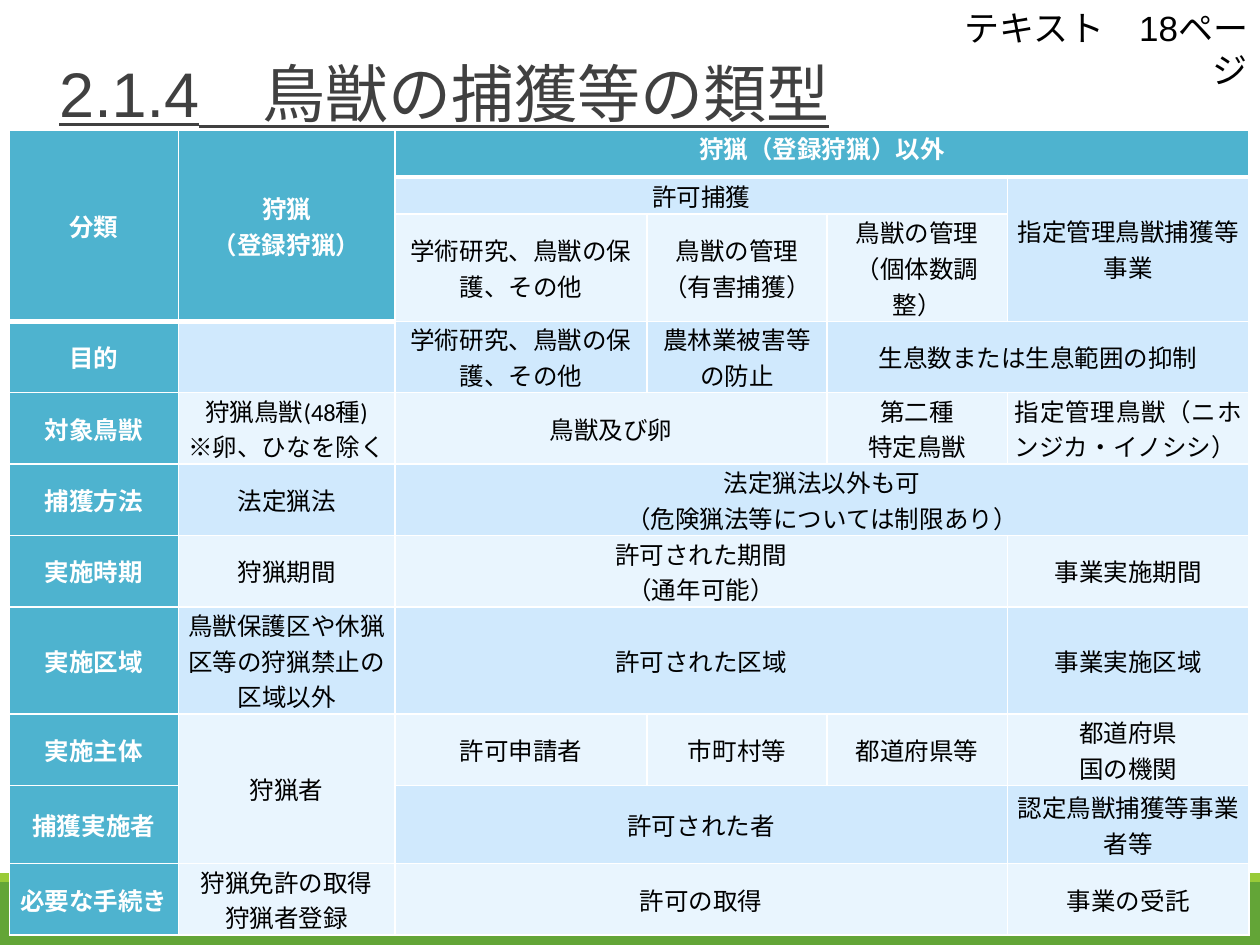
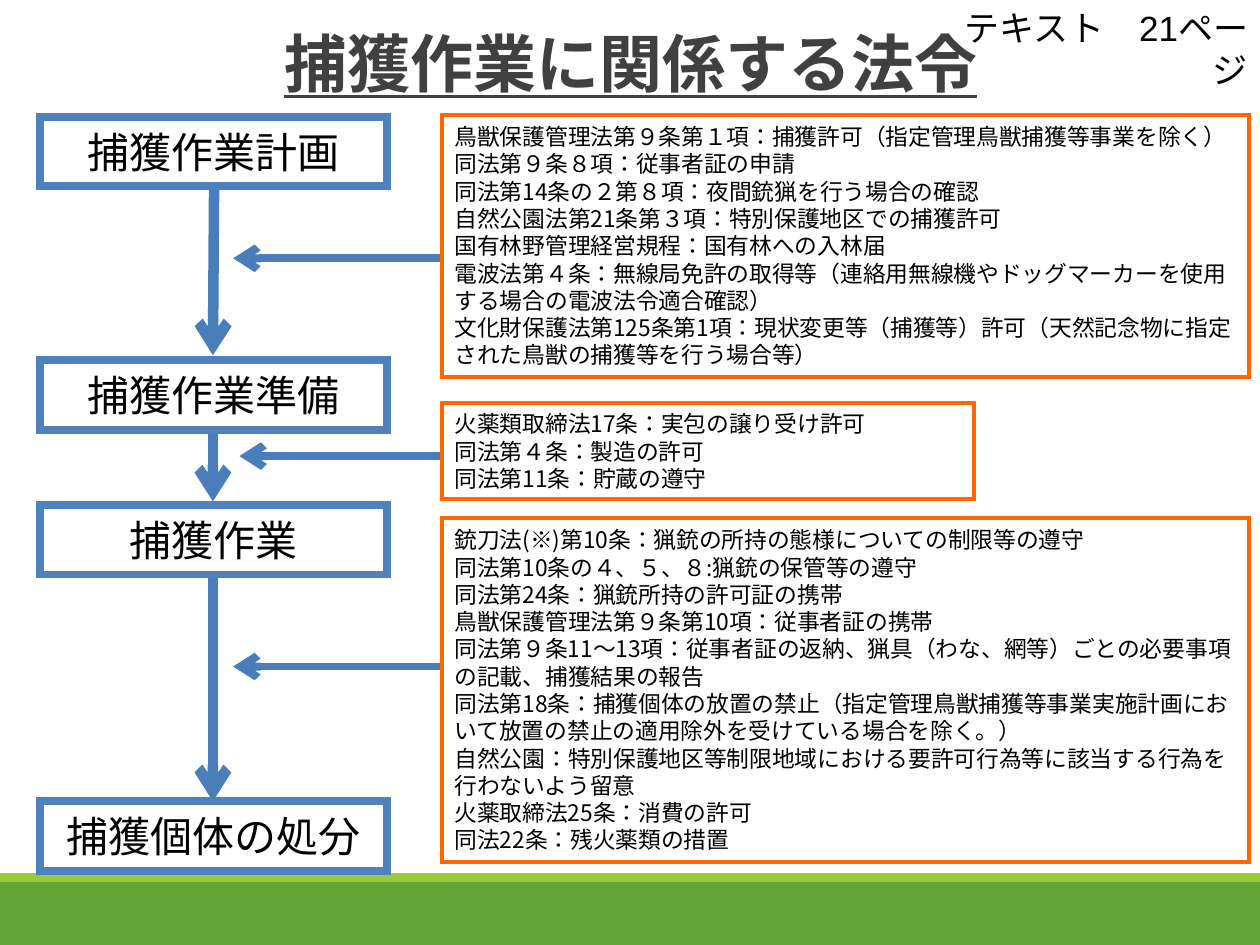
from dataclasses import dataclass

from lxml import etree
from pptx import Presentation
from pptx import util as u
from pptx.dml.color import RGBColor
from pptx.enum import lang, shapes, text
from pptx.oxml import ns


@dataclass(frozen=True)
class Theme:
    # Colours
    white: str = "FFFFFF"
    black: str = "000000"
    title: str = "404040"
    band: str = "63A537"
    band_edge: str = "99CB38"
    header: str = "4EB3CF"
    row_odd: str = "D0E9FD"
    row_even: str = "E9F5FE"
    step: str = "4F81BD"
    arrow: str = "4A7EBB"
    law: str = "FF6600"
    # Type
    latin: str = "Arial"
    table_font: str = "Calibri"
    japanese: str = "Noto Sans CJK JP"
    title_size: int = 36
    step_size: int = 24
    label_size: int = 20
    table_size: int = 14
    law_size: int = 13
    law_leading: float = 15.6


THEME = Theme()
COLUMNS, ROWS = 100, 75  # layout grid of the slide
ALIGN = text.PP_ALIGN
ANCHOR = text.MSO_ANCHOR


def write_text(frame, content, *, size, font=THEME.japanese, color=THEME.black,
               bold=False, underline=False, align=ALIGN.LEFT,
               anchor=ANCHOR.MIDDLE, spacing=None):
    """Write one paragraph for each line of content."""
    frame.word_wrap = True
    frame.vertical_anchor = anchor
    for index, line in enumerate(content.split("\n")):
        paragraph = frame.paragraphs[0] if index == 0 else frame.add_paragraph()
        paragraph.alignment = align
        if spacing:
            paragraph.line_spacing = spacing
        run = paragraph.add_run()
        run.text = line
        run.font.size = u.Pt(size)
        run.font.name = font
        run.font.bold = bold
        run.font.underline = underline
        run.font.language_id = lang.MSO_LANGUAGE_ID.JAPANESE
        run.font.color.rgb = RGBColor.from_string(color)
        east_asian = etree.Element(ns.qn("a:ea"), typeface=THEME.japanese)
        run.font._element.find(ns.qn("a:latin")).addnext(east_asian)


def add_border(cell, side, width):
    properties = cell._tc.get_or_add_tcPr()
    line = etree.SubElement(properties, ns.qn(f"a:ln{side}"), w=str(u.Pt(width)))
    fill = etree.SubElement(line, ns.qn("a:solidFill"))
    etree.SubElement(fill, ns.qn("a:srgbClr"), val=THEME.white)


def span_of(grid, row, column):
    """Count the cells that '^' (up) and '<' (left) join to this one."""
    height = width = 1
    while row + height < len(grid) and grid[row + height][column] == "^":
        height += 1
    while column + width < len(grid[row]) and grid[row][column + width] == "<":
        width += 1
    return height, width


class Deck:
    def __init__(self, theme):
        self.theme = theme
        self.presentation = Presentation()
        self.presentation.slide_width = u.Inches(10)
        self.presentation.slide_height = u.Inches(7.5)
        self.slide = None

    def x(self, columns):
        return round(self.presentation.slide_width * columns / COLUMNS)

    def y(self, rows):
        return round(self.presentation.slide_height * rows / ROWS)

    def area(self, left, top, width, height):
        return self.x(left), self.y(top), self.x(width), self.y(height)

    def new_slide(self, title, area, page, **title_format):
        """Start a slide with its title and bottom bands."""
        layout = self.presentation.slide_layouts.get_by_name("Title Only")
        self.slide = self.presentation.slides.add_slide(layout)
        self.box((0, 70, 100, 5), fill=self.theme.band)
        self.box((0, 69.3, 100, 0.7), fill=self.theme.band_edge)
        shape = self.slide.shapes.title
        shape.left, shape.top, shape.width, shape.height = self.area(*area)
        shape.text_frame.auto_size = text.MSO_AUTO_SIZE.NONE
        write_text(shape.text_frame, title, size=self.theme.title_size,
                   color=self.theme.title, underline=True, spacing=0.9,
                   **title_format)
        self.page_label(page)

    def page_label(self, page):
        shape = self.slide.shapes.add_textbox(*self.area(74.6, 0, 25.4, 4.4))
        write_text(shape.text_frame, f"テキスト　{page}ページ",
                   size=self.theme.label_size, font=self.theme.latin,
                   align=ALIGN.RIGHT, anchor=ANCHOR.TOP)

    def box(self, area, fill=THEME.white, line=None, width=1, content=None,
            **text_format):
        shape = self.slide.shapes.add_shape(
            shapes.MSO_SHAPE.RECTANGLE, *self.area(*area))
        shape.shadow.inherit = False
        shape.fill.solid()
        shape.fill.fore_color.rgb = RGBColor.from_string(fill)
        if line:
            shape.line.color.rgb = RGBColor.from_string(line)
            shape.line.width = u.Pt(width)
            etree.SubElement(shape.line._get_or_add_ln(), ns.qn("a:miter"),
                             lim="800000")
        else:
            shape.line.fill.background()
        if content:
            write_text(shape.text_frame, content, **text_format)

    def arrow(self, start, end, width):
        connector = self.slide.shapes.add_connector(
            shapes.MSO_CONNECTOR.STRAIGHT, self.x(start[0]), self.y(start[1]),
            self.x(end[0]), self.y(end[1]))
        connector.line.color.rgb = RGBColor.from_string(self.theme.arrow)
        connector.line.width = u.Pt(width)
        etree.SubElement(connector.line._get_or_add_ln(), ns.qn("a:tailEnd"),
                         type="arrow")
        etree.SubElement(connector._element.spPr, ns.qn("a:effectLst"))

    def table(self, left, top, widths, heights, grid, justified=()):
        frame = self.slide.shapes.add_table(
            len(heights), len(widths),
            *self.area(left, top, sum(widths), sum(heights)))
        table = frame.table
        table.first_row = table.horz_banding = False
        for column, width in zip(table.columns, widths):
            column.width = self.x(width)
        for row, height in zip(table.rows, heights):
            row.height = self.y(height)
        for row, line in enumerate(grid):
            for column, content in enumerate(line):
                self.cell(table, grid, row, column, content,
                          justify=(row, column) in justified)

    def cell(self, table, grid, row, column, content, justify):
        theme = self.theme
        cell = table.cell(row, column)
        header = row == 0 or column == 0
        for side in "LRTB":
            add_border(cell, side, 3 if row == 0 and side == "B" else 1)
        cell.fill.solid()
        cell.fill.fore_color.rgb = RGBColor.from_string(
            theme.header if header else
            theme.row_odd if row % 2 else theme.row_even)
        cell.margin_left = cell.margin_right = self.x(0.6)
        cell.margin_top = cell.margin_bottom = 0
        if content in ("", "^", "<"):
            return
        height, width = span_of(grid, row, column)
        if height * width > 1:
            cell.merge(table.cell(row + height - 1, column + width - 1))
        top = row == 0 and height == 1
        cell.vertical_anchor = ANCHOR.TOP if top else ANCHOR.MIDDLE
        write_text(cell.text_frame, content, size=theme.table_size,
                   font=theme.table_font, bold=header,
                   color=theme.white if header else theme.black,
                   align=ALIGN.JUSTIFY if justify else ALIGN.CENTER,
                   anchor=cell.vertical_anchor)


CAPTURE_TYPES = [
    ["分類", "狩猟\n（登録狩猟）", "狩猟（登録狩猟）以外", "<", "<", "<"],
    ["^", "^", "許可捕獲", "<", "<", "指定管理鳥獣捕獲等事業"],
    ["^", "^", "学術研究、鳥獣の保護、その他", "鳥獣の管理\n（有害捕獲）",
     "鳥獣の管理\n（個体数調整）", "^"],
    ["目的", "", "学術研究、鳥獣の保護、その他", "農林業被害等の防止",
     "生息数または生息範囲の抑制", "<"],
    ["対象鳥獣", "狩猟鳥獣(48種)\n※卵、ひなを除く", "鳥獣及び卵", "<",
     "第二種\n特定鳥獣", "指定管理鳥獣（ニホンジカ・イノシシ）"],
    ["捕獲方法", "法定猟法",
     "法定猟法以外も可\n（危険猟法等については制限あり）", "<", "<", "<"],
    ["実施時期", "狩猟期間", "許可された期間\n（通年可能）", "<", "<",
     "事業実施期間"],
    ["実施区域", "鳥獣保護区や休猟区等の狩猟禁止の区域以外",
     "許可された区域", "<", "<", "事業実施区域"],
    ["実施主体", "狩猟者", "許可申請者", "市町村等", "都道府県等",
     "都道府県\n国の機関"],
    ["捕獲実施者", "^", "許可された者", "<", "<", "認定鳥獣捕獲等事業者等"],
    ["必要な手続き", "狩猟免許の取得\n狩猟者登録", "許可の取得", "<", "<",
     "事業の受託"],
]

# Row heights for two and three lines of text
TWO_LINES, THREE_LINES = 5.67, 8.5

# Top row of each step
STEPS = {"捕獲作業計画": 9.3, "捕獲作業準備": 28.6,
         "捕獲作業": 40.1, "捕獲個体の処分": 63.6}

# Start and end of the arrows between steps
STEP_ARROWS = [((17, 13.6), (16.9, 28.2)), ((16.9, 32), (16.9, 39.8)),
               ((16.9, 42.5), (16.9, 63.6))]

# Row and tip column of the arrows from the laws
LAW_ARROWS = [(20.5, 18.5), (36.2, 19), (52.9, 18.5)]

# Top, width and height of each law box, with its text
LAWS = [
    (9.1, 64, 20.8, """鳥獣保護管理法第９条第１項：捕獲許可（指定管理鳥獣捕獲等事業を除く）
同法第９条８項：従事者証の申請
同法第14条の２第８項：夜間銃猟を行う場合の確認
自然公園法第21条第３項：特別保護地区での捕獲許可
国有林野管理経営規程：国有林への入林届
電波法第４条：無線局免許の取得等（連絡用無線機やドッグマーカーを使用する場合の電波法令適合確認）
文化財保護法第125条第1項：現状変更等（捕獲等）許可（天然記念物に指定された鳥獣の捕獲等を行う場合等）"""),
    (32, 42.2, 7.6, """火薬類取締法17条：実包の譲り受け許可
同法第４条：製造の許可
同法第11条：貯蔵の遵守"""),
    (41.1, 64, 27.3, """銃刀法(※)第10条：猟銃の所持の態様についての制限等の遵守
同法第10条の４、５、８:猟銃の保管等の遵守
同法第24条：猟銃所持の許可証の携帯
鳥獣保護管理法第９条第10項：従事者証の携帯
同法第９条11～13項：従事者証の返納、猟具（わな、網等）ごとの必要事項の記載、捕獲結果の報告
同法第18条：捕獲個体の放置の禁止（指定管理鳥獣捕獲等事業実施計画において放置の禁止の適用除外を受けている場合を除く。）
自然公園：特別保護地区等制限地域における要許可行為等に該当する行為を行わないよう留意
火薬取締法25条：消費の許可
同法22条：残火薬類の措置"""),
]


def build_capture_types(deck):
    deck.new_slide("2.1.4　鳥獣の捕獲等の類型", (3.7, 4.8, 91.5, 5.8), 18,
                   font=THEME.latin)
    heights = [3.75, 2.95, THREE_LINES, *[TWO_LINES] * 4, THREE_LINES,
               TWO_LINES, 6.2, TWO_LINES]
    deck.table(0.75, 10.3, [13.4, 17.2, 20, 14.3, 14.3, 19.2], heights,
               CAPTURE_TYPES, justified={(4, 5)})


def build_related_laws(deck):
    deck.new_slide("捕獲作業に関係する法令", (16.1, 2.4, 67.9, 5.8), 21,
                   bold=True, align=ALIGN.CENTER)
    # Arrows lie behind the boxes
    for start, end in STEP_ARROWS:
        deck.arrow(start, end, width=6)
    for row, tip in LAW_ARROWS:
        deck.arrow((44, row), (tip, row), width=4.5)
    # Steps on the left
    for step, top in STEPS.items():
        deck.box((3.15, top, 27.6, 5.5), line=THEME.step, width=4.5,
                 content=step, size=THEME.step_size, align=ALIGN.CENTER)
    # Laws on the right
    for top, width, height, laws in LAWS:
        deck.box((35.1, top, width, height), line=THEME.law, width=2.25,
                 content=laws, size=THEME.law_size,
                 spacing=u.Pt(THEME.law_leading))


def main():
    deck = Deck(THEME)
    build_capture_types(deck)
    build_related_laws(deck)
    deck.presentation.save("out.pptx")


if __name__ == "__main__":
    main()
